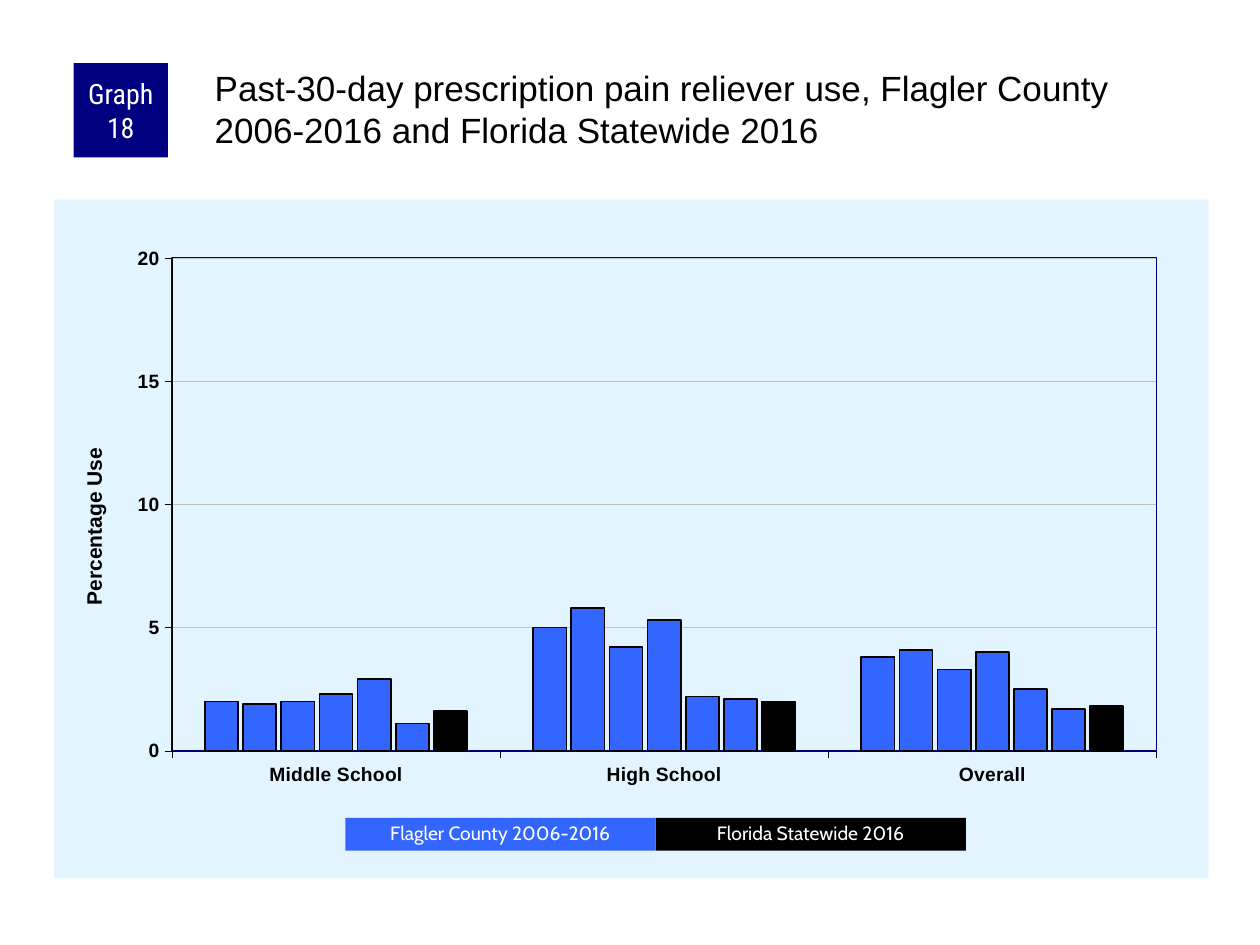
from collections import namedtuple
from dataclasses import dataclass

from lxml.etree import fromstring
from pptx import Presentation
from pptx.chart.data import CategoryChartData as Data
from pptx.dml.color import RGBColor as Rgb
from pptx.enum.chart import XL_CHART_TYPE as Kind, XL_TICK_MARK as Tick
from pptx.enum.shapes import MSO_SHAPE as Form
from pptx.enum.text import MSO_ANCHOR as Anchor, PP_ALIGN as Align
from pptx.util import Pt

Box = namedtuple("Box", "x y w h")


@dataclass(frozen=True)
class Theme:
    navy: str = "000080"
    blue: str = "3366FF"
    pale: str = "E1F4FF"
    grid: str = "C0C0C0"
    black: str = "000000"
    white: str = "FFFFFF"
    sans: str = "Arial"
    slim: str = "Roboto Condensed"
    soft: str = "Cabin"
    head: int = 20
    tag: int = 16
    name: int = 12
    label: int = 11


THEME = Theme()
NS = ('xmlns:c="http://schemas.openxmlformats.org/drawingml/2006/chart" '
      'xmlns:a="http://schemas.openxmlformats.org/drawingml/2006/main"')
CHART = "{http://schemas.openxmlformats.org/drawingml/2006/chart}"

GROUPS = ["Middle School", "High School", "Overall"]
COUNTY = [(2, 5, 3.8), (1.9, 5.8, 4.1), (2, 4.2, 3.3),
          (2.3, 5.3, 4), (2.9, 2.2, 2.5), (1.1, 2.1, 1.7)]
STATE = (1.6, 2, 1.8)


def style(font, face, size, color, bold=False):
    font.name, font.size, font.bold = face, Pt(size), bold
    font.color.rgb = Rgb.from_string(color)


def stroke(line, color, width):
    line.color.rgb = Rgb.from_string(color)
    line.width = Pt(width)


def fill(part, color):
    part.fill.solid()
    part.fill.fore_color.rgb = Rgb.from_string(color)


def add_block(slide, box, text, color, face, size, space=1.0, inset=0):
    """Filled rectangle with centred white text."""
    block = slide.shapes.add_shape(Form.RECTANGLE, *map(Pt, box))
    block.shadow.inherit = False
    fill(block, color)
    block.line.fill.background()
    frame = block.text_frame
    frame.word_wrap = True
    frame.vertical_anchor = Anchor.MIDDLE
    frame.margin_left = frame.margin_right = Pt(inset)
    frame.margin_top = frame.margin_bottom = 0
    frame.text = text
    para = frame.paragraphs[0]
    para.alignment = Align.CENTER
    para.line_spacing = space
    style(para.runs[0].font, face, size, THEME.white)


def add_head(slide, box):
    """Graph number and title."""
    side = 54
    add_block(slide, Box(box.x, box.y, side, side), "Graph 18",
              THEME.navy, THEME.slim, THEME.tag, inset=3.6)
    left = 78.5
    title = slide.shapes.add_textbox(
        *map(Pt, (box.x + left, box.y, box.w - left, box.h)))
    frame = title.text_frame
    frame.word_wrap = True
    frame.margin_left = frame.margin_top = Pt(2.2)
    frame.margin_right = frame.margin_bottom = 0
    frame.text = ("Past-30-day prescription pain reliever use, "
                  "Flagler County 2006-2016 and Florida Statewide 2016")
    style(frame.paragraphs[0].runs[0].font,
          THEME.sans, THEME.head, THEME.black)


def layout(spots, inner=False):
    """Manual chart layout from fractions of the chart."""
    target = '<c:layoutTarget val="inner"/>' if inner else ""
    modes = "".join(f'<c:{k}Mode val="edge"/>' for k in "xy")
    sizes = "".join(f'<c:{k} val="{v}"/>' for k, v in spots.items())
    return fromstring(f"<c:layout {NS}><c:manualLayout>{target}{modes}"
                      f"{sizes}</c:manualLayout></c:layout>")


def paint(paint_xml, line_xml):
    return fromstring(f"<c:spPr {NS}>{paint_xml}{line_xml}</c:spPr>")


def solid(color):
    return f'<a:solidFill><a:srgbClr val="{color}"/></a:solidFill>'


def set_axes(chart):
    for axis in (chart.category_axis, chart.value_axis):
        axis.major_tick_mark = Tick.OUTSIDE
        axis.minor_tick_mark = Tick.NONE
        style(axis.tick_labels.font, THEME.sans, THEME.label,
              THEME.black, True)
        stroke(axis.format.line, THEME.black, 0.25)
    axis = chart.value_axis
    axis.minimum_scale, axis.maximum_scale, axis.major_unit = 0, 20, 5
    axis.has_major_gridlines = True
    stroke(axis.major_gridlines.format.line, THEME.grid, 0.25)
    title = axis.axis_title
    title.text_frame.text = "Percentage Use"
    style(title.text_frame.paragraphs[0].runs[0].font,
          THEME.sans, THEME.name, THEME.black, True)
    node = title.element
    for old in node.findall(CHART + "layout"):
        node.remove(old)
    node.find(CHART + "tx").addnext(layout({"x": 0.02, "y": 0.36}))


def set_frame(chart):
    """Pale chart ground and navy plot border."""
    root = chart.element.find(CHART + "chart")
    root.addnext(paint(solid(THEME.pale), "<a:ln><a:noFill/></a:ln>"))
    plot = root.find(CHART + "plotArea")
    for old in plot.findall(CHART + "layout"):
        plot.remove(old)
    plot.insert(0, layout(
        {"x": 0.102, "y": 0.086, "w": 0.853, "h": 0.726}, inner=True))
    plot.append(paint("<a:noFill/>",
                      f'<a:ln w="{Pt(1)}">{solid(THEME.navy)}</a:ln>'))


def add_graph(slide, box):
    """Column chart with its colour key."""
    rows = COUNTY + [STATE]
    data = Data()
    data.categories = GROUPS
    for num, row in enumerate(rows, 1):
        data.add_series(f"Series {num}", row)
    chart = slide.shapes.add_chart(
        Kind.COLUMN_CLUSTERED, *map(Pt, box), data).chart
    chart.has_title = chart.has_legend = False
    style(chart.font, THEME.sans, 8, THEME.black)
    plot = chart.plots[0]
    plot.gap_width, plot.overlap = 200, -15
    plot.vary_by_categories = False
    for num, series in enumerate(plot.series):
        fill(series.format,
             THEME.blue if num < len(COUNTY) else THEME.black)
        stroke(series.format.line, THEME.black, 1)
    set_axes(chart)
    set_frame(chart)

    # Colour key
    wide = 177.3
    key = [("Flagler County 2006-2016", THEME.blue),
           ("Florida Statewide 2016", THEME.black)]
    for num, (text, color) in enumerate(key):
        spot = Box(box.x + 166.3 + num * wide, box.y + 353.4, wide, 18.7)
        add_block(slide, spot, text, color, THEME.soft, THEME.label, 0.9)


def main():
    deck = Presentation()
    deck.slide_width, deck.slide_height = Pt(720), Pt(540)
    slide = deck.slides.add_slide(deck.slide_layouts[6])
    add_graph(slide, Box(31, 114, 659.5, 388))
    add_head(slide, Box(42, 36, 648.5, 60))
    deck.save("out.pptx")


if __name__ == "__main__":
    main()
